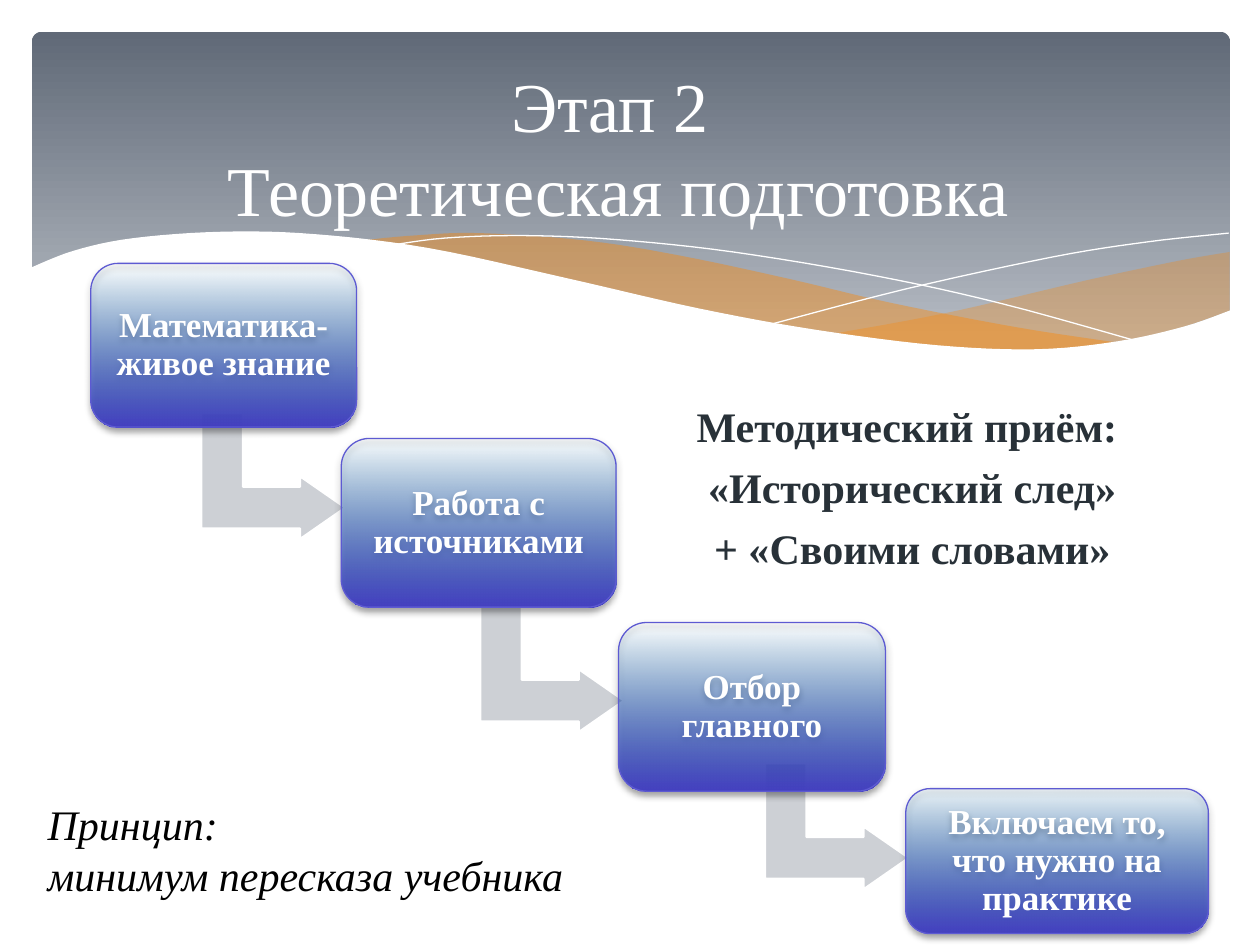
import pptx
import pptx.util
import pptx.dml.color
import pptx.enum.shapes
import pptx.enum.text
import pptx.oxml
import pptx.oxml.ns
from lxml import etree

Cm = pptx.util.Cm
Pt = pptx.util.Pt
SHAPE = pptx.enum.shapes.MSO_SHAPE
ALIGN = pptx.enum.text.PP_ALIGN
ANCHOR = pptx.enum.text.MSO_ANCHOR
COLORS = {
    "white": "FFFFFF", "black": "000000", "body": "283138",
    "sky_top": "606977", "sky_bottom": "B5BBC3", "wave": "FF8600",
    "arrow": "CDD0D5", "step_top": "0070C0", "step_bottom": "4340C1",
    "step_line": "5D5AD2",
}


def rgb(name):
    return pptx.dml.color.RGBColor.from_string(COLORS[name])


def set_alpha(sp, percent):
    color = sp.element.spPr.xpath(".//a:srgbClr")[0]
    etree.SubElement(color, pptx.oxml.ns.qn("a:alpha")).set("val", str(percent * 1000))


def fill_gradient(sp, top, bottom, end=1.0):
    sp.fill.gradient()
    sp.fill.gradient_angle = 270
    for stop, name, position in zip(sp.fill.gradient_stops, (top, bottom), (0, end)):
        stop.color.rgb = rgb(name)
        stop.position = position


def add_shadow(sp):
    sp.element.spPr.append(pptx.oxml.parse_xml(
        f'<a:effectLst {pptx.oxml.ns.nsdecls("a")}>'
        '<a:outerShdw blurRad="50800" dist="25400" dir="5400000" rotWithShape="0">'
        f'<a:srgbClr val="{COLORS["black"]}"><a:alpha val="38000"/></a:srgbClr>'
        '</a:outerShdw></a:effectLst>'))


def write(tf, text, size, color, bold=False, italic=False, align=ALIGN.CENTER,
          anchor=ANCHOR.TOP, wrap=True, before=0, spacing=None):
    tf.word_wrap = wrap
    tf.vertical_anchor = anchor
    for i, line in enumerate(text.split("\n")):
        p = tf.add_paragraph() if i else tf.paragraphs[0]
        p.text = line
        p.alignment = align
        if i and before:
            p.space_before = Pt(before)
        if spacing:
            p.line_spacing = spacing
        for r in p.runs:
            r.font.name = "Times New Roman"
            r.font.size = Pt(size)
            r.font.bold = bold
            r.font.italic = italic
            r.font.color.rgb = rgb(color)


def text_box(s, x, y, w, h, text, **style):
    tb = s.shapes.add_textbox(Cm(x), Cm(y), Cm(w), Cm(h))
    write(tb.text_frame, text, **style)


def smooth(points, steps=6):
    ends = [points[0], *points, points[-1]]
    curve = [points[0]]
    for a, b, c, d in zip(ends, ends[1:], ends[2:], ends[3:]):
        for t in (k / steps for k in range(1, steps + 1)):
            curve.append(tuple(
                0.5 * (2 * q + (r - p) * t + (2 * p - 5 * q + 4 * r - v) * t ** 2
                       + (3 * q - p - 3 * r + v) * t ** 3)
                for p, q, r, v in zip(a, b, c, d)))
    return curve


def outline(s, x, y, points, fill=None, alpha=None, closed=True):
    pts = [(Cm(x + dx), Cm(y + dy)) for dx, dy in points]
    fb = s.shapes.build_freeform(*pts[0])
    fb.add_line_segments(pts[1:], close=closed)
    sp = fb.convert_to_shape()
    sp.shadow.inherit = False
    if fill:
        sp.fill.solid()
        sp.fill.fore_color.rgb = rgb(fill)
        if alpha:
            set_alpha(sp, alpha)
        sp.line.fill.background()
    else:
        sp.fill.background()
        sp.line.color.rgb = rgb("white")
        sp.line.width = Pt(0)


def header(s, x, y, w, h):
    sky = s.shapes.add_shape(SHAPE.ROUNDED_RECTANGLE, Cm(x), Cm(y), Cm(w), Cm(h))
    sky.adjustments[0] = 0.03
    sky.shadow.inherit = False
    fill_gradient(sky, "sky_top", "sky_bottom", 0.9)
    sky.line.fill.background()

    right_top = [(24.15, 4.44), (23.11, 4.62), (21.23, 5.02), (18.49, 5.66), (16.15, 6.09)]
    right_bottom = [(16.15, 6.09), (17.95, 6.32), (19.76, 6.42), (21.28, 6.34),
                    (22.75, 6.09), (24.15, 5.63)]
    middle_top = [(22.04, 6.29), (19.86, 5.96), (17.29, 5.46), (15.34, 5), (13.1, 4.52),
                  (11.17, 4.21), (9.01, 4.06), (7.69, 4.11), (6.62, 4.21)]
    middle_bottom = [(6.62, 4.21), (8.55, 4.52), (10.76, 5), (13.74, 5.66), (16.25, 6.12),
                     (18.36, 6.37), (20.39, 6.42), (22.04, 6.29)]
    falling = [(7.21, 4.31), (8.33, 4.16), (9.93, 4.11), (11.78, 4.19), (14.14, 4.44),
               (17.01, 4.92), (19.55, 5.48), (22.4, 6.27)]
    rising = [(14.93, 5.89), (17.65, 5.18), (20.59, 4.54), (22.47, 4.24), (24.13, 4.06)]
    edge = [(-0.05, 4.77), (0.86, 4.41), (2.05, 4.16), (3.86, 4.03), (5.71, 4.08),
            (8, 4.36), (10.71, 4.95), (13.46, 5.58), (15.82, 6.01), (18.26, 6.32),
            (20.26, 6.4), (21.89, 6.24), (23.24, 5.94), (24.18, 5.61)]

    outline(s, x, y, smooth(right_top) + smooth(right_bottom), "wave", 29)
    outline(s, x, y, smooth(middle_top) + smooth(middle_bottom), "wave", 40)
    for line in (falling, rising):
        outline(s, x, y, smooth(line), closed=False)
    outline(s, x, y, smooth(edge) + [(24.18, 7.72), (-0.05, 7.72)], "white")
    text_box(s, x + 0.4, y + 0.22, 22.86, 4.19, "Этап 2 \vТеоретическая подготовка",
             size=40, color="white", anchor=ANCHOR.MIDDLE)


def step(s, x, y, w, h, text, clear, arrow):
    if arrow:
        dx, dy = arrow
        bend = s.shapes.add_shape(SHAPE.BENT_UP_ARROW, Cm(x + dx), Cm(y + dy),
                                  Cm(2.54), Cm(2.9))
        for i, value in enumerate((0.33, 0.25, 0.36)):
            bend.adjustments[i] = value
        bend.rotation = 90
        bend.shadow.inherit = False
        bend.fill.solid()
        bend.fill.fore_color.rgb = rgb("arrow")
        bend.line.color.rgb = rgb("white")
        bend.line.width = Pt(1.25)
    sp = s.shapes.add_shape(SHAPE.ROUNDED_RECTANGLE, Cm(x), Cm(y), Cm(w), Cm(h))
    fill_gradient(sp, "step_top", "step_bottom")
    set_alpha(sp, clear)
    sp.line.color.rgb = rgb("step_line")
    sp.line.width = Pt(0.75)
    add_shadow(sp)
    tf = sp.text_frame
    tf.margin_left = tf.margin_right = tf.margin_top = tf.margin_bottom = Cm(0.2)
    write(tf, text, size=20, color="white", bold=True, anchor=ANCHOR.MIDDLE, spacing=0.9)


def staircase(s, x, y):
    steps = [
        (0, 0, 5.36, 3.3, "Математика- живое знание", 0, (2.41, 2.84)),
        (5.05, 3.53, 5.54, 3.4, "Работа с источниками", 1, (2.98, 3.2)),
        (10.64, 7.24, 5.38, 3.4, "Отбор главного", 0, (3.13, 2.66)),
        (16.43, 10.59, 6.1, 2.92, "Включаем то, что нужно на практике", 5, None),
    ]
    for dx, dy, *rest in steps:
        step(s, x + dx, y + dy, *rest)


def main():
    prs = pptx.Presentation()
    prs.slide_width, prs.slide_height = Cm(25.4), Cm(19.05)
    s = prs.slides.add_slide(prs.slide_layouts[6])
    header(s, 0.64, 0.64, 24.16, 6.86)
    text_box(s, 11.33, 7.95, 14.12, 3.84,
             "Методический приём: \n«Исторический след»\n+ «Своими словами»",
             size=24, color="body", bold=True, before=6)
    staircase(s, 1.83, 5.31)
    text_box(s, 0.71, 15.98, 11.28, 3.07, "Принцип:\nминимум пересказа учебника",
             size=24, color="black", italic=True, align=ALIGN.LEFT, wrap=False)
    prs.save("out.pptx")


if __name__ == "__main__":
    main()
